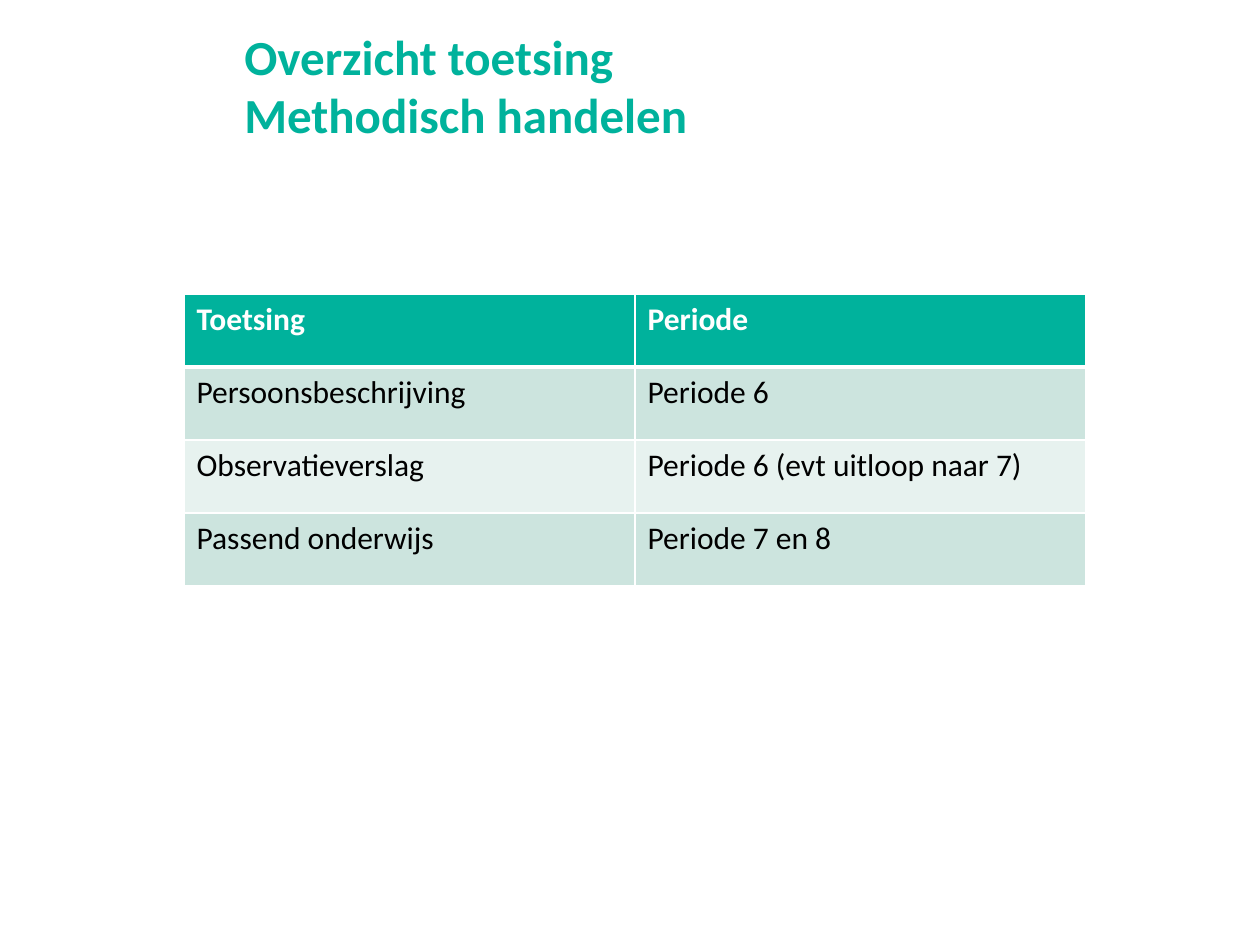
from typing import NamedTuple

import pptx
import pptx.dml.color
import pptx.enum.text
import pptx.oxml
import pptx.oxml.ns
import pptx.util

PX = pptx.util.Inches(1) / 126
FONT = "Calibri"
GREEN, WHITE, BLACK = "00B29C", "FFFFFF", "000000"
BANDS = ("CCE4DE", "E7F2EF")


class Assessment(NamedTuple):
    name: str
    period: str


HEADER = Assessment("Toetsing", "Periode")
ASSESSMENTS = [
    Assessment("Persoonsbeschrijving", "Periode 6"),
    Assessment("Observatieverslag", "Periode 6 (evt uitloop naar 7)"),
    Assessment("Passend onderwijs", "Periode 7 en 8"),
]


def px(length: int) -> pptx.util.Emu:
    return pptx.util.Emu(round(length * PX))


def color(value: str) -> pptx.dml.color.RGBColor:
    return pptx.dml.color.RGBColor.from_string(value)


def style_font(paragraph, size: int, font_color: str, bold: bool) -> None:
    paragraph.font.name = FONT
    paragraph.font.size = pptx.util.Pt(size)
    paragraph.font.bold = bold
    paragraph.font.color.rgb = color(font_color)


def add_borders(cell, bottom_width: int) -> None:
    """Draw white cell borders, 1 pt wide except at the bottom."""
    properties = cell._tc.get_or_add_tcPr()
    widths = {"lnL": 1, "lnR": 1, "lnT": 1, "lnB": bottom_width}
    for position, (tag, width) in enumerate(widths.items()):
        line = pptx.oxml.parse_xml(
            f'<a:{tag} {pptx.oxml.ns.nsdecls("a")} w="{pptx.util.Pt(width)}">'
            f'<a:solidFill><a:srgbClr val="{WHITE}"/></a:solidFill></a:{tag}>'
        )
        properties.insert(position, line)


def add_title(slide, text: str) -> None:
    box = slide.shapes.add_textbox(px(232), px(32), px(964), px(118))
    frame = box.text_frame
    frame.word_wrap = True
    frame.vertical_anchor = pptx.enum.text.MSO_ANCHOR.BOTTOM
    paragraph = frame.paragraphs[0]
    paragraph.text = text
    style_font(paragraph, 28, GREEN, True)


def add_assessment_table(slide) -> None:
    rows = [HEADER, *ASSESSMENTS]
    columns = len(HEADER)
    table = slide.shapes.add_table(
        len(rows), columns, px(184), px(294), px(451 * columns), px(73 * len(rows))
    ).table
    for row_index, row in enumerate(rows):
        is_header = row_index == 0
        fill = GREEN if is_header else BANDS[(row_index - 1) % 2]
        for column_index, text in enumerate(row):
            cell = table.cell(row_index, column_index)
            cell.text = text
            cell.fill.solid()
            cell.fill.fore_color.rgb = color(fill)
            add_borders(cell, 3 if is_header else 1)
            style_font(cell.text_frame.paragraphs[0], 18,
                       WHITE if is_header else BLACK, is_header)


def main() -> None:
    presentation = pptx.Presentation()
    presentation.slide_width = px(1260)
    presentation.slide_height = px(945)
    slide = presentation.slides.add_slide(presentation.slide_layouts[6])
    add_title(slide, "Overzicht toetsing \vMethodisch handelen")
    add_assessment_table(slide)
    presentation.save("out.pptx")


if __name__ == "__main__":
    main()
